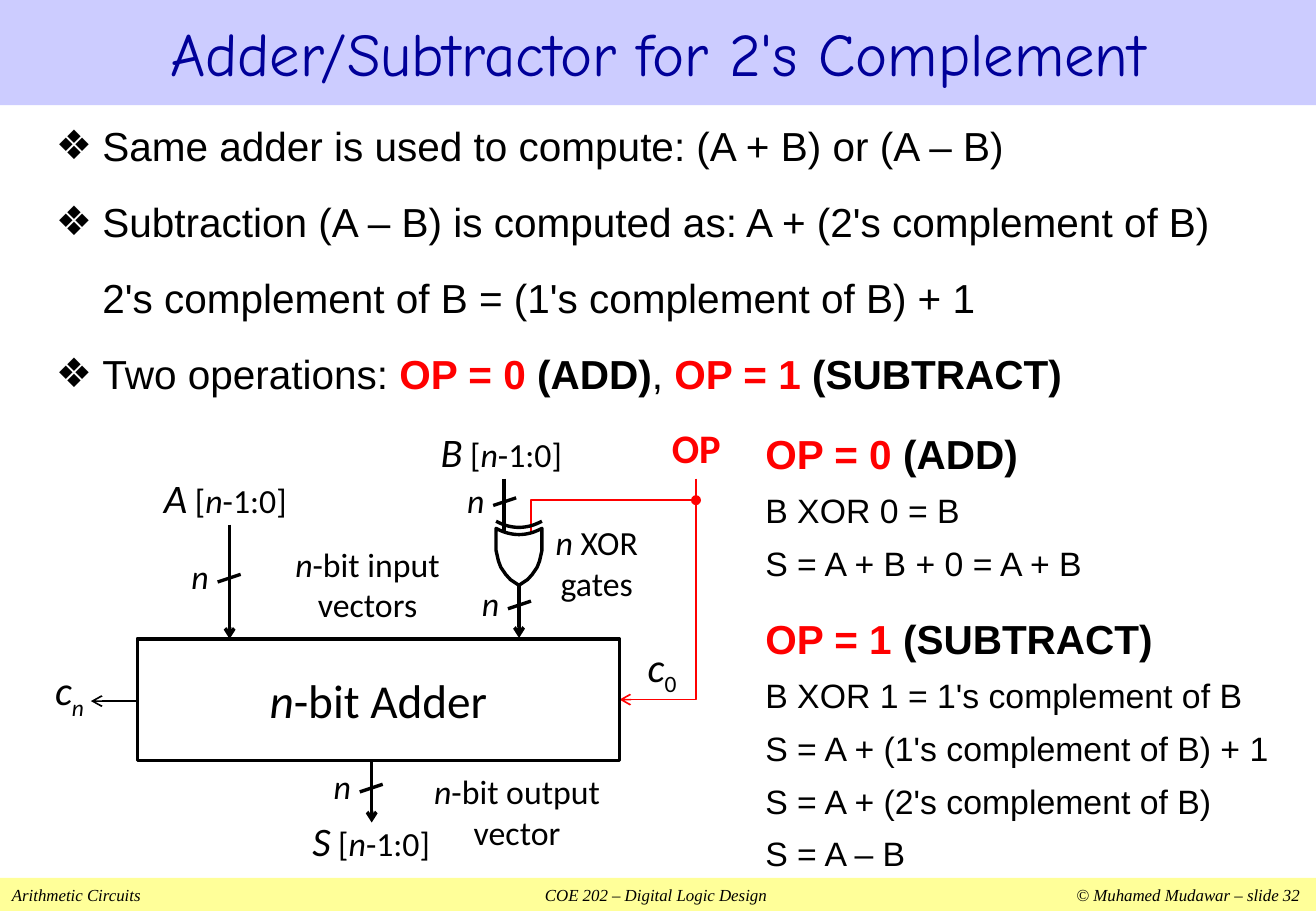
from lxml.etree import SubElement
from pptx import Presentation
from pptx.dml.color import RGBColor
from pptx.enum.shapes import MSO_CONNECTOR, MSO_SHAPE
from pptx.enum.text import MSO_ANCHOR, PP_ALIGN
from pptx.oxml.ns import qn
from pptx.util import Cm, Pt

rgb = RGBColor.from_string
BLACK, RED, WHITE = "000000", "FF0000", "FFFFFF"


def write(frame, paragraphs, font_format, wrap=True, margin=0,
          anchor=MSO_ANCHOR.MIDDLE, **paragraph_format):
    """Fill a text frame; each paragraph is a list of (text, font changes)."""
    frame.word_wrap, frame.vertical_anchor = wrap, anchor
    for side in ("left", "right", "top", "bottom"):
        setattr(frame, f"margin_{side}", Cm(margin))
    for index, runs in enumerate(paragraphs):
        paragraph = frame.add_paragraph() if index else frame.paragraphs[0]
        for name, value in paragraph_format.items():
            setattr(paragraph, name, value)
        for text, changes in runs:
            run = paragraph.add_run()
            run.text = text
            for name, value in {**font_format, **changes}.items():
                if name == "color":
                    run.font.color.rgb = rgb(value)
                elif name == "baseline":
                    run.font._element.set("baseline", str(value))
                else:
                    setattr(run.font, name, value)


def stroke(shape, color, width, tail=None):
    """Set the line, its end mark and an empty effect list."""
    shape.line.color.rgb = rgb(color)
    shape.line.width = Pt(width)
    properties = shape._element.spPr
    if tail:
        SubElement(properties.find(qn("a:ln")), qn("a:tailEnd"), type=tail)
    SubElement(properties, qn("a:effectLst"))


presentation = Presentation()
presentation.slide_width, presentation.slide_height = Cm(27.51), Cm(19.05)
slide = presentation.slides.add_slide(presentation.slide_layouts[5])
shapes = slide.shapes

arial = dict(name="Arial", size=Pt(24), color=BLACK)
calibri = dict(name="Calibri", size=Pt(20), color=BLACK)
big, italic, bold = dict(size=Pt(24)), dict(italic=True), dict(bold=True)
red_bold = dict(color=RED, bold=True)
small = dict(size=Pt(20))
center = dict(alignment=PP_ALIGN.CENTER)

# Title and footer
title = shapes.title
title.left, title.top, title.width, title.height = Cm(0), Cm(0), Cm(27.51), Cm(2.2)
title.fill.solid()
title.fill.fore_color.rgb = rgb("CCCCFF")
write(title.text_frame, [[("Adder/Subtractor for 2's Complement", {})]],
      dict(name="Comic Neue", size=Pt(36), color="000099"), margin=0.13, **center)

footer = shapes.add_shape(MSO_SHAPE.RECTANGLE, Cm(0), Cm(18.36), Cm(27.51), Cm(0.69))
footer.shadow.inherit = False
footer.fill.solid()
footer.fill.fore_color.rgb = rgb("FFFF99")
footer.line.fill.background()
write(footer.text_frame,
      [[("Arithmetic Circuits\tCOE 202 – Digital Logic Design\t© Muhamed Mudawar – slide 32", {})]],
      dict(name="Times New Roman", size=Pt(10), color=BLACK, italic=True),
      margin=0.25, alignment=PP_ALIGN.LEFT)
tabs = SubElement(footer.text_frame.paragraphs[0]._p.get_or_add_pPr(), qn("a:tabLst"))
for position, alignment in ((13.46, "ctr"), (26.92, "r")):
    SubElement(tabs, qn("a:tab"), pos=str(Cm(position)), algn=alignment)

# Key points
key_points = shapes.add_textbox(Cm(0.97), Cm(2.34), Cm(25.6), Cm(6.4)).text_frame
write(key_points, [
    [("Same adder is used to compute: (A + B) or (A – B)", {})],
    [("Subtraction (A – B) is computed as: A + (2's complement of B)", {})],
    [("2's complement of B = (1's complement of B) + 1", {})],
    [("Two operations: ", {}), ("OP = 0 ", red_bold), ("(ADD)", bold), (", ", {}),
     ("OP = 1 ", red_bold), ("(SUBTRACT)", bold)],
], arial, margin=0.2, anchor=MSO_ANCHOR.TOP, space_before=Pt(16.2))
for index, point in enumerate(key_points.paragraphs):
    indents = point._p.get_or_add_pPr()
    indents.set("marL", str(Cm(0.97)))
    if index != 2:
        indents.set("indent", str(Cm(-0.97)))
        SubElement(indents, qn("a:buFont"), typeface="Arial")
        SubElement(indents, qn("a:buChar"), char="❖")

# Wires: points, colour, width, end mark
for points, color, width, tail in (
    ([(11.1, 11.15), (11.1, 10.46), (14.55, 10.46)], RED, 1, "oval"),
    ([(14.55, 10.01), (14.55, 14.63), (12.95, 14.63)], RED, 1, "arrow"),
):
    start, *rest = [(Cm(x), Cm(y)) for x, y in points]
    builder = shapes.build_freeform(*start)
    builder.add_line_segments(rest, close=False)
    op_wire = builder.convert_to_shape()
    op_wire.fill.background()
    stroke(op_wire, color, width, tail)

slashes = [(4.79, 12.09), (10.86, 12.65), (7.76, 16.48), (10.55, 10.49)]
wires = [
    (10.54, 10.01, 10.54, 11.18, 2, None),
    (4.8, 10.97, 4.8, 13.36, 2, "arrow"),
    (7.77, 15.93, 7.77, 17.2, 2, "arrow"),
    (10.85, 12.17, 10.85, 13.34, 2, "arrow"),
    (2.87, 14.66, 1.9, 14.66, 1, "arrow"),
] + [(x - 0.24, y + 0.08, x + 0.24, y - 0.08, 2, None) for x, y in slashes]
for *ends, width, tail in wires:
    wire = shapes.add_connector(MSO_CONNECTOR.STRAIGHT, *map(Cm, ends))
    stroke(wire, BLACK, width, tail)

# Adder
adder = shapes.add_shape(MSO_SHAPE.RECTANGLE, Cm(2.87), Cm(13.36), Cm(10.08), Cm(2.54))
adder.fill.background()
stroke(adder, BLACK, 2)
write(adder.text_frame, [[("n", italic), ("-bit Adder", {})]],
      {**calibri, "size": Pt(28)}, wrap=False, **center)

# XOR gate: a body below a separate input arc
gate_x, half_width, dip = 10.85, 0.48, 0.13
arc = [(step / 8 * half_width, dip * (1 - (step / 8) ** 2)) for step in range(-8, 9)]
right_side = [(0.48, 11.51), (0.43, 11.73), (0.38, 11.86), (0.28, 12.01), (0.18, 12.12)]
left_side = [(-dx, y) for dx, y in reversed(right_side)]
body = [(dx, 11.05 + dy) for dx, dy in arc] + right_side + [(0, 12.24)] + left_side
input_arc = [(dx, 10.9 + dy) for dx, dy in arc]
for outline, closed in ((body, True), (input_arc, False)):
    start, *rest = [(Cm(gate_x + dx), Cm(y)) for dx, y in outline]
    builder = shapes.build_freeform(*start)
    builder.add_line_segments(rest, close=closed)
    gate_part = builder.convert_to_shape()
    if closed:
        gate_part.fill.solid()
        gate_part.fill.fore_color.rgb = rgb(WHITE)
    else:
        gate_part.fill.background()
    stroke(gate_part, BLACK, 2)

# Diagram labels: left, top, width, height, wrap, paragraphs
n = ("n", italic)
big_italic = {**big, **italic}
labels = [(x - 0.95, y - 0.48, 0.69, 0.89, False, [[n]]) for x, y in slashes]
labels += [
    (*box, False, [[(bus, big_italic), (" [", {}), n, ("-1:0]", {})]])
    for bus, box in (("A", (3.35, 9.83, 2.72, 1.14)),
                     ("B", (9.12, 8.86, 2.72, 1.14)),
                     ("S", (5.92, 17.12, 3.68, 0.89)))
]
labels += [
    (13.28, 13.51, 1.12, 0.99, False, [[("c", big_italic), ("0", {**big, "baseline": -25000})]]),
    (0.97, 14, 0.97, 0.99, False, [[("c", big_italic), ("n", {**big_italic, "baseline": -25000})]]),
    (13.92, 8.86, 1.27, 0.99, False, [[("OP", {**big, **red_bold})]]),
    (5.92, 11.25, 3.53, 1.93, True, [[n, ("-bit input vectors", {})]]),
    (8.97, 16.1, 3.68, 1.75, True, [[n, ("-bit output vector", {})]]),
    (11.51, 10.8, 1.93, 1.93, True, [[("n ", italic), ("XOR", {})], [("gates", {})]]),
]
for *box, wrap, paragraphs in labels:
    label = shapes.add_textbox(*map(Cm, box))
    write(label.text_frame, paragraphs, calibri, wrap=wrap, **center)

# Operation summary
summary = shapes.add_textbox(Cm(16), Cm(8.74), Cm(10.72), Cm(9.45)).text_frame
add_steps = ["B XOR 0 = B", "S = A + B + 0 = A + B"]
subtract_steps = ["B XOR 1 = 1's complement of B", "S = A + (1's complement of B) + 1",
                  "S = A + (2's complement of B)", "S = A – B"]
summary_lines = []
for code, operation, steps in (("OP = 0 ", "(ADD)", add_steps),
                               ("OP = 1 ", "(SUBTRACT)", subtract_steps)):
    summary_lines.append([(code, red_bold), (operation, bold)])
    summary_lines += [[(step, small)] for step in steps]
write(summary, summary_lines, arial, line_spacing=1.3)
summary.paragraphs[len(add_steps) + 1].space_before = Pt(10)

presentation.save("out.pptx")
